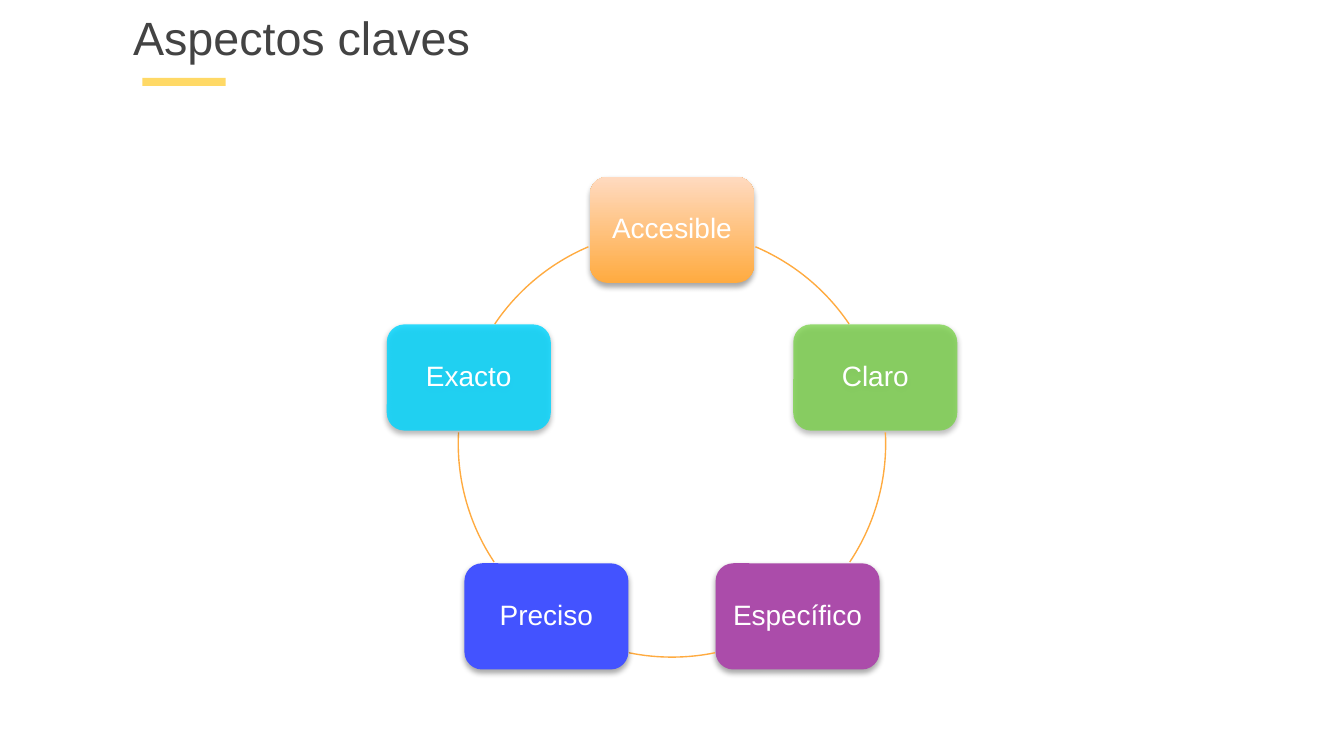
import math

from lxml import etree
from pptx import Presentation
from pptx.dml.color import RGBColor
from pptx.enum.shapes import MSO_SHAPE
from pptx.enum.text import MSO_ANCHOR, PP_ALIGN
from pptx.oxml import parse_xml
from pptx.oxml.ns import qn
from pptx.util import Inches, Pt

RECT, ROUNDED, ARC = MSO_SHAPE.RECTANGLE, MSO_SHAPE.ROUNDED_RECTANGLE, MSO_SHAPE.ARC
MIDDLE, CENTER = MSO_ANCHOR.MIDDLE, PP_ALIGN.CENTER

COLORS = {
    "accent": "FFD966", "title": "434343", "label": "FFFFFF",
    "orange": "FFAB40", "peach": "FFDAC0", "green": "75D242",
    "purple": "AB4CAA", "blue": "4353FF", "cyan": "00D6FF",
}
SHADOW = (
    '<a:effectLst xmlns:a="http://schemas.openxmlformats.org/drawingml/2006/main">'
    '<a:outerShdw blurRad="39370" dist="22860" dir="5400000" rotWithShape="0">'
    '<a:srgbClr val="000000"><a:alpha val="35000"/></a:srgbClr>'
    '</a:outerShdw></a:effectLst>'
)


def rgb(name):
    return RGBColor.from_string(COLORS[name])


def write(frame, text, size, color, insets):
    """Put one line of text in a frame; insets run left, top, right, bottom."""
    frame.word_wrap = True
    (frame.margin_left, frame.margin_top,
     frame.margin_right, frame.margin_bottom) = map(Inches, insets)
    paragraph = frame.paragraphs[0]
    paragraph.text = text
    paragraph.line_spacing = 0.9
    paragraph.font.name = "Arial"
    paragraph.font.size = Pt(size)
    paragraph.font.color.rgb = rgb(color)
    return paragraph


prs = Presentation()
prs.slide_width = Inches(10)
prs.slide_height = Inches(10 * 9 / 16)
slide = prs.slides.add_slide(prs.slide_layouts[6])
shapes = slide.shapes

underline = shapes.add_shape(RECT, Inches(1.06), Inches(0.58), Inches(0.62), Inches(0.06))
underline.shadow.inherit = False
underline.fill.solid()
underline.fill.fore_color.rgb = rgb("accent")
underline.line.fill.background()

title = shapes.add_textbox(Inches(0.99), Inches(0.07), Inches(6.61), Inches(0.53))
write(title.text_frame, "Aspectos claves", 25, "title", (0, 0.04, 0.07, 0.04))

# Five cards spaced evenly round a ring, clockwise from the top
CENTER_X, CENTER_Y, RADIUS = 5, 3.3, 1.59
CARD_W, CARD_H = 1.22, 0.79

# Label, fill, opacity in percent, start and end angle of the arc that follows
aspects = [
    ("Accesible", "orange", 100, 293, 326),
    ("Claro", "green", 74, 357, 33.7),
    ("Específico", "purple", 100, 78.4, 101.6),
    ("Preciso", "blue", 100, 146.3, 183),
    ("Exacto", "cyan", 82, 214, 247),
]

for index, (label, color, opacity, start, end) in enumerate(aspects):
    angle = math.radians(index * 360 / len(aspects) - 90)
    x = CENTER_X + RADIUS * math.cos(angle)
    y = CENTER_Y + RADIUS * math.sin(angle)
    card = shapes.add_shape(ROUNDED, Inches(x - CARD_W / 2), Inches(y - CARD_H / 2),
                            Inches(CARD_W), Inches(CARD_H))
    if label == "Accesible":
        card.fill.gradient()
        card.fill.gradient_angle = 90
        for stop, shade in zip(card.fill.gradient_stops, ("orange", "peach")):
            stop.color.rgb = rgb(shade)
    else:
        card.fill.solid()
        card.fill.fore_color.rgb = rgb(color)
    if opacity < 100:
        fill_color = card._element.spPr.find(qn("a:solidFill"))[0]
        etree.SubElement(fill_color, qn("a:alpha"), val=str(opacity * 1000))
    card.line.fill.background()
    card._element.spPr.append(parse_xml(SHADOW))
    card.text_frame.vertical_anchor = MIDDLE
    write(card.text_frame, label, 15, "label", (0.06,) * 4).alignment = CENTER

    arc = shapes.add_shape(ARC, Inches(CENTER_X - RADIUS), Inches(CENTER_Y - RADIUS),
                           Inches(2 * RADIUS), Inches(2 * RADIUS))
    arc.shadow.inherit = False
    arc.fill.background()
    arc.line.color.rgb = rgb("orange")
    arc.line.width = Pt(0.75)
    # Arc angles are stored in 60000ths of a degree, adjustments in 100000ths
    arc.adjustments[0] = start * 0.6
    arc.adjustments[1] = end * 0.6

prs.save("out.pptx")
